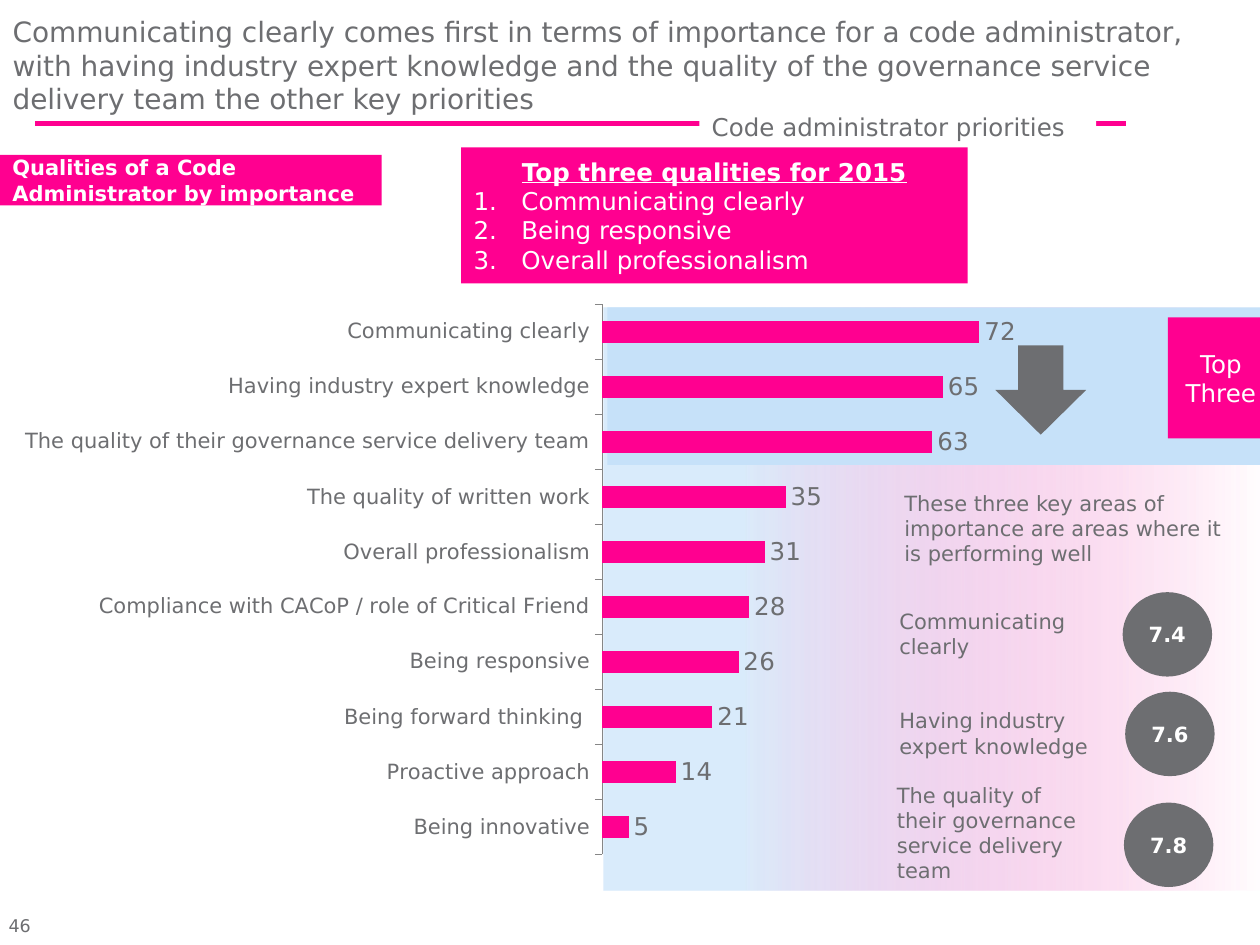
from lxml import etree
from pptx import Presentation
from pptx.chart.data import CategoryChartData
from pptx.dml.color import RGBColor
from pptx.enum import chart as ch, shapes, text
from pptx.oxml import ns, parse_xml
from pptx.util import Inches, Pt

FONT = "DejaVu Sans"
COLORS = {
    "pink": "FF0090",
    "rose": "FF21A0",
    "gray": "6D6E71",
    "sky": "C6E1F9",
    "white": "FFFFFF",
    "axis": "868686",
}
SHAPE = shapes.MSO_SHAPE
ALIGN = text.PP_ALIGN
ANCHOR = text.MSO_ANCHOR

PRIORITIES = {
    "Communicating clearly": 72,
    "Having industry expert knowledge": 65,
    "The quality of their governance service delivery team": 63,
    "The quality of written work": 35,
    "Overall professionalism": 31,
    "Compliance with CACoP / role of Critical Friend": 28,
    "Being responsive": 26,
    "Being forward thinking ": 21,
    "Proactive approach": 14,
    "Being innovative": 5,
}
SCORES = [
    ("Communicating clearly", 7.04, 4.78, "7.4", 8.91, 4.7),
    ("Having industry expert knowledge", 7.04, 5.57, "7.6", 8.93, 5.49),
    ("The quality of their governance service delivery team", 7.02, 6.16, "7.8", 8.92, 6.37),
]


def color(name):
    return RGBColor.from_string(COLORS[name])


def style_font(font, size, name="gray", bold=False):
    font.name = FONT
    font.size = Pt(size)
    font.bold = bold
    font.color.rgb = color(name)


def write(shape, words, size, name="gray", bold=False, align=ALIGN.LEFT, anchor=ANCHOR.TOP):
    frame = shape.text_frame
    frame.word_wrap = True
    frame.auto_size = text.MSO_AUTO_SIZE.NONE
    frame.vertical_anchor = anchor
    frame.text = words
    for paragraph in frame.paragraphs:
        paragraph.alignment = align
        for run in paragraph.runs:
            style_font(run.font, size, name, bold)


def add_text(slide, words, box, size, name="gray", **layout):
    label = slide.shapes.add_textbox(*map(Inches, box))
    write(label, words, size, name, **layout)


def add_block(slide, box, fill, kind=SHAPE.RECTANGLE):
    block = slide.shapes.add_shape(kind, *map(Inches, box))
    block.shadow.inherit = False
    block.line.fill.background()
    block.fill.solid()
    block.fill.fore_color.rgb = color(fill)
    return block


def add_rule(slide):
    rule = slide.shapes.add_connector(
        shapes.MSO_CONNECTOR.STRAIGHT, Inches(0.28), Inches(0.98), Inches(8.94), Inches(0.98))
    rule.line.color.rgb = color("pink")
    rule.line.width = Pt(3)
    etree.SubElement(rule._element.spPr, ns.qn("a:effectLst"))


def add_fading_panel(slide):
    fill = add_block(slide, (4.79, 2.44, 5.21, 4.63), "sky").fill
    fill.gradient()
    fill.gradient_angle = 0
    looks = [("sky", 0.21, 64000), ("rose", 1, 0)]
    for stop, (name, position, opacity) in zip(fill.gradient_stops, looks):
        stop.color.rgb = color(name)
        stop.position = position
        rgb = stop._gs.find(ns.qn("a:srgbClr"))
        etree.SubElement(rgb, ns.qn("a:alpha"), val=str(opacity))


def place_plot(chart, x, y, width, height):
    plot_area = chart._chartSpace.chart.plotArea
    for old in plot_area.findall(ns.qn("c:layout")):
        plot_area.remove(old)
    plot_area.insert(0, parse_xml(
        f'<c:layout {ns.nsdecls("c")}><c:manualLayout><c:layoutTarget val="inner"/>'
        '<c:xMode val="edge"/><c:yMode val="edge"/>'
        f'<c:x val="{x}"/><c:y val="{y}"/><c:w val="{width}"/><c:h val="{height}"/>'
        '</c:manualLayout></c:layout>'))


def add_priority_chart(slide):
    data = CategoryChartData(number_format="0")
    data.categories = list(PRIORITIES)
    data.add_series("Series 1", list(PRIORITIES.values()))
    chart = slide.shapes.add_chart(
        ch.XL_CHART_TYPE.BAR_CLUSTERED,
        *map(Inches, (-0.08, 2.29, 8.44, 4.62)), data).chart
    chart.has_legend = False
    chart.has_title = False
    style_font(chart.font, 14)
    place_plot(chart, 0.576, 0.027, 0.394, 0.945)

    qualities = chart.category_axis
    qualities.reverse_order = True
    qualities.major_tick_mark = ch.XL_TICK_MARK.OUTSIDE
    qualities.format.line.color.rgb = color("axis")
    style_font(qualities.tick_labels.font, 12)

    scale = chart.value_axis
    scale.minimum_scale = 0
    scale.maximum_scale = 80
    scale.has_major_gridlines = False
    scale.visible = False

    plot = chart.plots[0]
    plot.gap_width = 150
    plot.vary_by_categories = False
    bars = plot.series[0]
    bars.format.fill.solid()
    bars.format.fill.fore_color.rgb = color("pink")
    labels = bars.data_labels
    labels.show_value = True
    labels.number_format = "0"
    labels.number_format_is_linked = False
    labels.position = ch.XL_LABEL_POSITION.OUTSIDE_END
    style_font(labels.font, 14)


def add_top_qualities(slide):
    panel = add_block(slide, (3.66, 1.17, 4.02, 1.08), "pink")
    lines = ["Top three qualities for 2015", "Communicating clearly",
             "Being responsive", "Overall professionalism"]
    write(panel, "\n".join(lines), 14, "white", anchor=ANCHOR.MIDDLE)
    heading, *items = panel.text_frame.paragraphs
    heading.alignment = ALIGN.CENTER
    heading.runs[0].font.bold = True
    heading.runs[0].font.underline = True
    for item in items:
        properties = item._p.get_or_add_pPr()
        properties.set("marL", str(Inches(0.38)))
        properties.set("indent", str(-Inches(0.38)))
        etree.SubElement(properties, ns.qn("a:buFont"), typeface="+mj-lt")
        etree.SubElement(properties, ns.qn("a:buAutoNum"), type="arabicPeriod")


def add_score(slide, quality, left, top, score, circle_left, circle_top):
    height = 0.91 if len(quality) > 40 else 0.5
    add_text(slide, quality, (left, top, 1.76, height), 12)
    circle = add_block(slide, (circle_left, circle_top, 0.71, 0.67), "gray", SHAPE.OVAL)
    write(circle, score, 12, "white", bold=True, align=ALIGN.CENTER, anchor=ANCHOR.MIDDLE)


def set_title(slide):
    title = slide.shapes.title
    title.left, title.top, title.width, title.height = map(Inches, (0, 0.09, 9.64, 0.85))
    write(title, "Communicating clearly comes first in terms of importance for a code "
          "administrator, with having industry expert knowledge and the quality of the "
          "governance service delivery team the other key priorities",
          16, anchor=ANCHOR.MIDDLE)


def main():
    deck = Presentation()
    deck.slide_width, deck.slide_height = Inches(10), Inches(7.5)
    slide = deck.slides.add_slide(deck.slide_layouts[5])
    set_title(slide)
    add_rule(slide)
    add_fading_panel(slide)
    add_text(slide, "46", (-0.03, 7.21, 1.14, 0.27), 10, anchor=ANCHOR.BOTTOM)
    section = add_block(slide, (0, 1.23, 3.03, 0.4), "pink")
    write(section, "Qualities of a Code Administrator by importance", 12, "white",
          bold=True, anchor=ANCHOR.MIDDLE)
    add_block(slide, (4.82, 2.44, 5.18, 1.25), "sky")
    add_priority_chart(slide)
    add_block(slide, (9.27, 2.52, 0.73, 0.96), "pink")
    add_text(slide, "Top Three", (9.27, 2.72, 0.84, 0.57), 14, "white", align=ALIGN.CENTER)
    subtitle = add_block(slide, (5.55, 0.84, 3.15, 0.34), "white")
    write(subtitle, "Code administrator priorities", 14)
    add_text(slide, "These three key areas of importance are areas where it is performing well",
             (7.08, 3.84, 2.83, 0.71), 12)
    add_block(slide, (7.9, 2.74, 0.72, 0.71), "gray", SHAPE.DOWN_ARROW)
    for row in SCORES:
        add_score(slide, *row)
    add_top_qualities(slide)
    deck.save("out.pptx")


if __name__ == "__main__":
    main()
